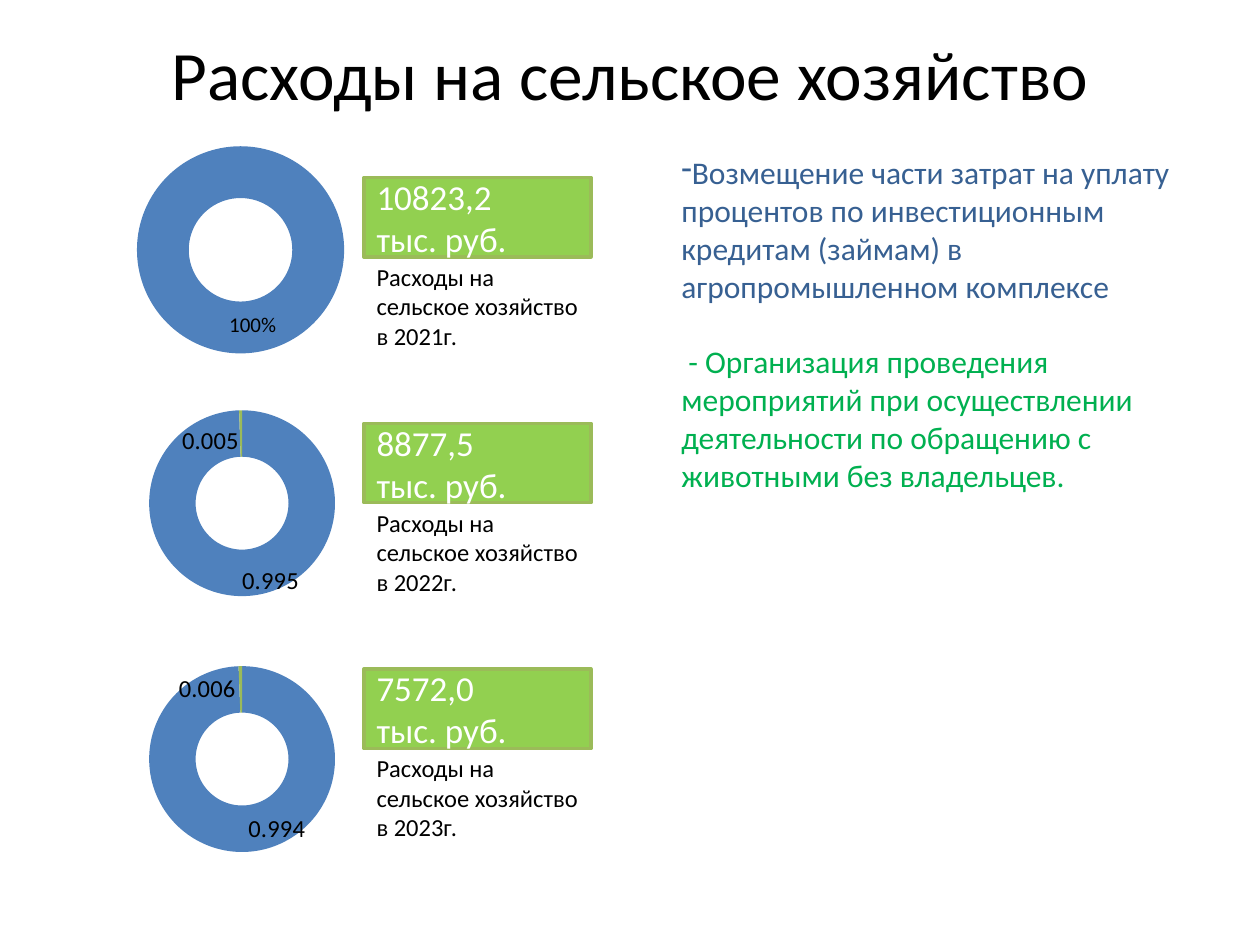
from pptx import Presentation
from pptx import oxml
from pptx import util as u
from pptx.chart import data as chart_data
from pptx.dml import color
from pptx.enum import chart as chart_enum, shapes, text
from pptx.oxml import ns

FONT = "Calibri"
PALETTE = ["4F81BD", "C0504D", "9BBB59", "8064A2"]
LARGE_RING = (0.16, 0.07, 0.68, 0.81)
SMALL_RING = (0.2, 0.14, 0.61, 0.73)
BOX_TOP, ROW_PITCH = 101.5, 140.4
YEARS = [
    dict(year=2021, amount="10823,2", top=73.4, values=[1, 0, 0, 0], ring=LARGE_RING,
         number_format="0%", size=12, leaders=1,
         labels={0: (0.04, -0.01), 3: (0.15, -0.09)}),
    dict(year=2022, amount="8877,5", top=213.8, values=[0.995, None, 0.005], ring=SMALL_RING,
         number_format="General", size=14, leaders=0,
         labels={0: (0.09, 0.03), 2: (-0.1, 0.03)}),
    dict(year=2023, amount="7572,0", top=360, values=[0.994, None, 0.006], ring=SMALL_RING,
         number_format="General", size=14, leaders=0,
         labels={0: (0.11, 0), 2: (-0.11, 0)}),
]


def rgb(value):
    return color.RGBColor.from_string(value)


def points(*lengths):
    return [u.Pt(length) for length in lengths]


def style(font, size, fill):
    font.name = FONT
    font.size = u.Pt(size)
    font.color.rgb = rgb(fill)


def write(frame, lines, size, fills, align=text.PP_ALIGN.LEFT):
    frame.word_wrap = True
    for index, (line, fill) in enumerate(zip(lines, fills)):
        para = frame.paragraphs[0] if index == 0 else frame.add_paragraph()
        para.text = line
        para.alignment = align
        style(para.font, size, fill)


def add_text(slide, area, lines, size, fills, align=text.PP_ALIGN.LEFT,
             anchor=text.MSO_ANCHOR.TOP):
    box = slide.shapes.add_textbox(*points(*area))
    box.text_frame.vertical_anchor = anchor
    write(box.text_frame, lines, size, fills, align)
    return box


def add_amount(slide, area, amount):
    box = slide.shapes.add_shape(shapes.MSO_SHAPE.RECTANGLE, *points(*area))
    box.shadow.inherit = False
    box.fill.solid()
    box.fill.fore_color.rgb = rgb("92D050")
    box.line.color.rgb = rgb("9BBB59")
    box.line.width = u.Pt(2)
    box.text_frame.vertical_anchor = text.MSO_ANCHOR.MIDDLE
    write(box.text_frame, [amount, "тыс. руб."], 20, ["FFFFFF"] * 2)


def manual_layout(x, y, width=None, height=None):
    modes = size = ""
    if width is not None:
        modes = '<c:layoutTarget val="inner"/><c:xMode val="edge"/><c:yMode val="edge"/>'
        size = f'<c:w val="{width}"/><c:h val="{height}"/>'
    return oxml.parse_xml(
        f'<c:layout {ns.nsdecls("c")}><c:manualLayout>{modes}'
        f'<c:x val="{x}"/><c:y val="{y}"/>{size}</c:manualLayout></c:layout>')


def add_doughnut(slide, row):
    data = chart_data.CategoryChartData(number_format=row["number_format"])
    data.categories = [str(number + 1) for number in range(len(row["values"]))]
    data.add_series("Series 1", row["values"])
    frame = slide.shapes.add_chart(chart_enum.XL_CHART_TYPE.DOUGHNUT,
                                   *points(50.4, row["top"], 174.2, 146.2), data)
    chart = frame.chart
    chart.has_legend = False
    chart.has_title = False
    style(chart.font, 18, "000000")
    plot = chart.plots[0]
    plot.vary_by_categories = True
    series = plot.series[0]
    series.data_labels.show_value = False
    for index in range(len(row["values"])):
        fill = series.points[index].format.fill
        fill.solid()
        fill.fore_color.rgb = rgb(PALETTE[index])
    for index, offset in row["labels"].items():
        style(series.points[index].data_label.font, row["size"], "000000")
        label = series._element.xpath(f"c:dLbls/c:dLbl[c:idx/@val={index}]")[0]
        label.insert(1, manual_layout(*offset))
    for leader in series._element.xpath("c:dLbls/c:showLeaderLines"):
        leader.set("val", str(row["leaders"]))
    area = chart._chartSpace.xpath("c:chart/c:plotArea")[0]
    for layout in area.xpath("c:layout"):
        area.remove(layout)
    area.insert(0, manual_layout(*row["ring"]))


def add_purposes(slide):
    lines = [
        "Возмещение части затрат на уплату процентов по инвестиционным кредитам "
        "(займам) в агропромышленном комплексе",
        "- Организация проведения мероприятий при осуществлении деятельности "
        "по обращению с животными без владельцев.",
    ]
    box = add_text(slide, (382.3, 84.2, 298.1, 247), lines, 18, ["376092", "00B050"])
    first, second = box.text_frame.paragraphs
    bullet = oxml.parse_xml(f'<a:buChar {ns.nsdecls("a")} char="-"/>')
    first._p.get_or_add_pPr().append(bullet)
    second.space_before = u.Pt(21.6)
    second._p.get_or_add_pPr().set("indent", str(u.Pt(4)))


def main():
    deck = Presentation()
    deck.slide_width, deck.slide_height = points(720, 540)
    slide = deck.slides.add_slide(deck.slide_layouts[6])
    add_text(slide, (36, 21.6, 648, 40.3), ["Расходы на сельское хозяйство"], 39.6,
             ["000000"], text.PP_ALIGN.CENTER, text.MSO_ANCHOR.MIDDLE)
    for index, row in enumerate(YEARS):
        top = BOX_TOP + index * ROW_PITCH
        add_doughnut(slide, row)
        add_amount(slide, (208.1, top, 129.6, 45.4), row["amount"])
        add_text(slide, (208.1, top + 44.7, 129.6, 58.3),
                 [f"Расходы на сельское хозяйство в {row['year']}г."], 14, ["000000"])
    add_purposes(slide)
    deck.save("out.pptx")


if __name__ == "__main__":
    main()
